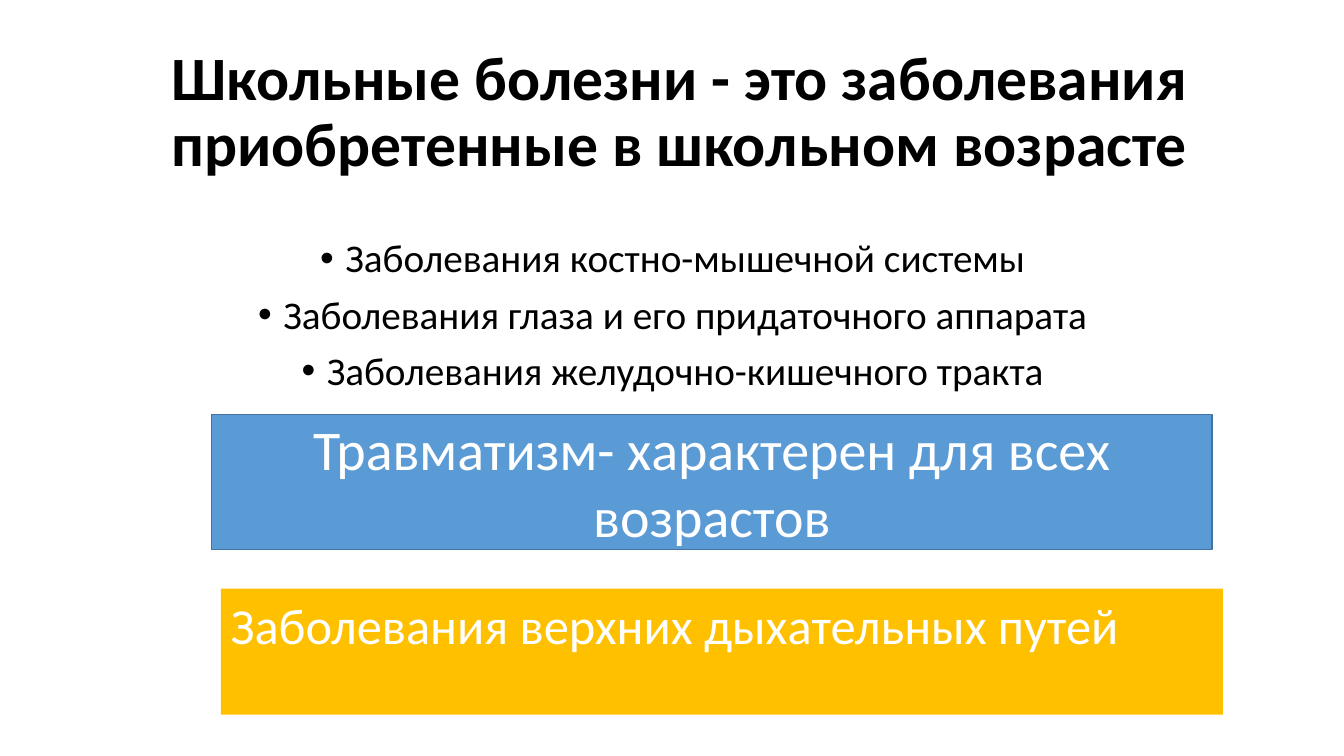
from pptx import Presentation
from pptx.dml.color import RGBColor
from pptx.enum.shapes import MSO_SHAPE as Shape
from pptx.enum.text import MSO_ANCHOR as Anchor, MSO_AUTO_SIZE as AutoSize, PP_ALIGN as Align
from pptx.util import Inches, Pt

COLORS = {
    "text": "000000",
    "light": "FFFFFF",
    "blue": "5B9BD5",
    "blue_edge": "43739E",
    "amber": "FFC000",
}
FONT = "Calibri"


def color(name):
    return RGBColor.from_string(COLORS[name])


def place(shape, box):
    shape.left, shape.top, shape.width, shape.height = (Inches(n) for n in box)


def add_text(paragraph, words, size, tone, align, bold=False):
    paragraph.alignment = align
    run = paragraph.add_run()
    run.text = words
    run.font.name = FONT
    run.font.size = Pt(size)
    run.font.bold = bold
    run.font.color.rgb = color(tone)


def fill_heading(heading, box, words):
    place(heading, box)
    frame = heading.text_frame
    frame.auto_size = AutoSize.NONE
    frame.vertical_anchor = Anchor.MIDDLE
    paragraph = frame.paragraphs[0]
    paragraph.line_spacing = 0.9
    add_text(paragraph, words, 44, "text", Align.CENTER, bold=True)


def fill_diseases(diseases, box, items):
    place(diseases, box)
    frame = diseases.text_frame
    frame.auto_size = AutoSize.NONE
    frame.vertical_anchor = Anchor.TOP
    for index, item in enumerate(items):
        paragraph = frame.add_paragraph() if index else frame.paragraphs[0]
        paragraph.line_spacing = 0.9
        paragraph.space_before = Pt(10)
        add_text(paragraph, item, 28, "text", Align.CENTER)
        # Hanging indent for the bullet
        properties = paragraph._p.get_or_add_pPr()
        properties.set("marL", str(Inches(0.25)))
        properties.set("indent", str(Inches(-0.25)))


def add_banner(slide, box, words, size, fill, edge=None, align=Align.LEFT, anchor=Anchor.TOP):
    banner = slide.shapes.add_shape(Shape.RECTANGLE, *(Inches(n) for n in box))
    banner.shadow.inherit = False
    banner.fill.solid()
    banner.fill.fore_color.rgb = color(fill)
    if edge:
        banner.line.color.rgb = color(edge)
        banner.line.width = Pt(1)
    else:
        banner.line.fill.background()
    frame = banner.text_frame
    frame.word_wrap = True
    frame.vertical_anchor = anchor
    add_text(frame.paragraphs[0], words, size, "light", align)


def build_school_diseases(deck):
    slide = deck.slides.add_slide(deck.slide_layouts[1])

    # Title and list
    fill_heading(slide.shapes.title, (0.92, 0.4, 11.65, 1.45),
                 "Школьные болезни - это заболевания приобретенные в школьном возрасте")
    fill_diseases(slide.placeholders[1], (0.92, 2.32, 11.5, 4.44), [
        "Заболевания костно-мышечной системы",
        "Заболевания глаза и его придаточного аппарата",
        "Заболевания желудочно-кишечного тракта",
    ])

    # Highlighted banners
    add_banner(slide, (2.1, 4.11, 9.92, 1.34), "Травматизм- характерен для всех возрастов",
               40, "blue", "blue_edge", Align.CENTER, Anchor.MIDDLE)
    add_banner(slide, (2.19, 5.84, 9.94, 1.25), "Заболевания верхних дыхательных путей",
               36, "amber")


def main():
    deck = Presentation()
    deck.slide_width, deck.slide_height = Inches(13.33), Inches(7.5)
    build_school_diseases(deck)
    deck.save("out.pptx")


if __name__ == "__main__":
    main()
